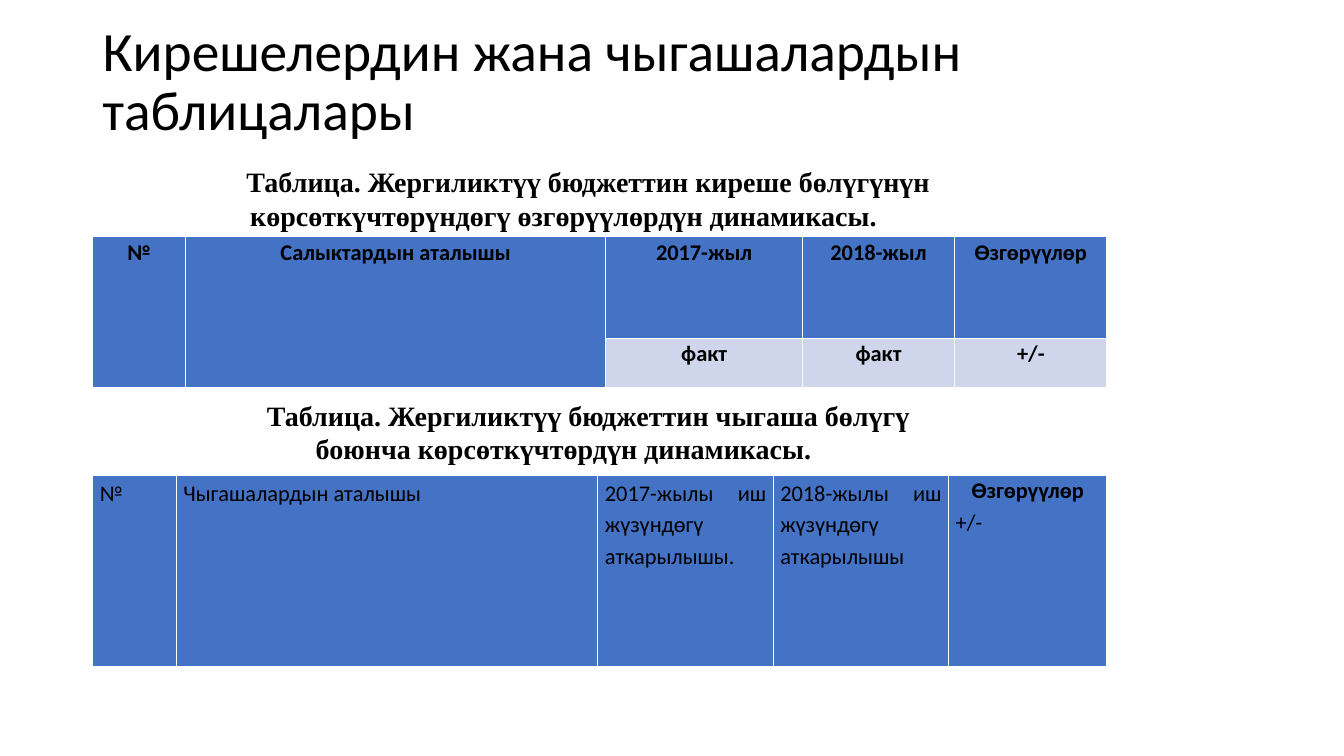
from dataclasses import dataclass

from pptx import Presentation
from pptx.dml.color import RGBColor
from pptx.enum.text import MSO_ANCHOR, PP_ALIGN
from pptx.slide import Slide
from pptx.text.text import TextFrame
from pptx.util import Emu, Inches, Pt

MIDDLE = MSO_ANCHOR.MIDDLE
LEFT, CENTER, JUSTIFY = PP_ALIGN.LEFT, PP_ALIGN.CENTER, PP_ALIGN.JUSTIFY

SLIDE_WIDTH, SLIDE_HEIGHT = Inches(13.33), Inches(7.5)


@dataclass(frozen=True)
class Theme:
    ink: RGBColor = RGBColor(0, 0, 0)
    header_fill: RGBColor = RGBColor(0x44, 0x72, 0xC4)
    body_fill: RGBColor = RGBColor(0xCF, 0xD5, 0xEA)
    sans: str = "Calibri"
    serif: str = "Times New Roman"
    title_size: float = 39.6
    caption_size: float = 20
    cell_size: float = 16


@dataclass(frozen=True)
class Line:
    text: str
    bold: bool = False
    align: PP_ALIGN = JUSTIFY
    spacing: float = 1.15


@dataclass(frozen=True)
class Caption:
    text: str
    top: float
    height: float
    bottom_inset: float = 0.05


@dataclass(frozen=True)
class BudgetTable:
    top: float
    columns: list[float]
    rows: list[float]
    cells: list[list[list[Line]]]
    merged_columns: int = 0


THEME = Theme()
TABLE_LEFT = 6.9
CAPTION_LEFT, CAPTION_WIDTH = 13.13, 57.61


def across(percent: float) -> Emu:
    return Emu(round(SLIDE_WIDTH * percent / 100))


def down(percent: float) -> Emu:
    return Emu(round(SLIDE_HEIGHT * percent / 100))


def heading(text: str) -> list[Line]:
    return [Line(text, bold=True, align=CENTER, spacing=1.07)]


INCOME = BudgetTable(
    top=31.33,
    columns=[6.9, 31.28, 14.63, 11.33, 11.33],
    rows=[13.47, 6.53],
    cells=[
        [heading(name) for name in
         ("№", "Салыктардын аталышы", "2017-жыл", "2018-жыл", "Өзгөрүүлөр")],
        [[], [], heading("факт"), heading("факт"), heading("+/-")],
    ],
    merged_columns=2,
)
EXPENSES = BudgetTable(
    top=62.93,
    columns=[6.23, 31.36, 13.05, 13.05, 11.78],
    rows=[25.2],
    cells=[[
        [Line("№")],
        [Line("Чыгашалардын аталышы")],
        [Line("2017-жылы иш жүзүндөгү аткарылышы.")],
        [Line("2018-жылы иш жүзүндөгү аткарылышы")],
        heading("Өзгөрүүлөр") + [Line("+/-")],
    ]],
)
CAPTIONS = [
    Caption("Таблица. Жергиликтүү бюджеттин чыгаша бөлүгү боюнча "
            "көрсөткүчтөрдүн динамикасы.", 51.87, 13.87, bottom_inset=0.3),
    Caption("Таблица. Жергиликтүү бюджеттин киреше бөлүгүнүн "
            "көрсөткүчтөрүндөгү өзгөрүүлөрдүн динамикасы.", 21.07, 10.27),
]


def write(frame: TextFrame, lines: list[Line], *, font: str, size: float,
          first_indent: float = 0) -> None:
    for index, line in enumerate(lines):
        paragraph = frame.add_paragraph() if index else frame.paragraphs[0]
        paragraph.alignment = line.align
        paragraph.line_spacing = line.spacing
        if first_indent:
            properties = paragraph._p.get_or_add_pPr()
            properties.set("marL", "0")
            properties.set("indent", str(Inches(first_indent)))
        run = paragraph.add_run()
        run.text = line.text
        run.font.name = font
        run.font.size = Pt(size)
        run.font.bold = line.bold
        run.font.color.rgb = THEME.ink


def add_text_frame(slide: Slide, left: float, top: float, width: float,
                   height: float, bottom_inset: float) -> TextFrame:
    """Place a wrapping, middle-anchored text box, in percent of the slide."""
    frame = slide.shapes.add_textbox(
        across(left), down(top), across(width), down(height)).text_frame
    frame.word_wrap = True
    frame.vertical_anchor = MIDDLE
    frame.margin_bottom = Inches(bottom_inset)
    return frame


def add_caption(slide: Slide, caption: Caption) -> None:
    frame = add_text_frame(slide, CAPTION_LEFT, caption.top, CAPTION_WIDTH,
                           caption.height, caption.bottom_inset)
    write(frame, [Line(caption.text, bold=True, align=CENTER, spacing=1.0)],
          font=THEME.serif, size=THEME.caption_size, first_indent=0.49)


def add_budget_table(slide: Slide, budget: BudgetTable) -> None:
    table = slide.shapes.add_table(
        len(budget.rows), len(budget.columns), across(TABLE_LEFT),
        down(budget.top), across(sum(budget.columns)),
        down(sum(budget.rows))).table
    for column, width in zip(table.columns, budget.columns):
        column.width = across(width)
    for row, height in zip(table.rows, budget.rows):
        row.height = down(height)
    for column_index in range(budget.merged_columns):
        table.cell(0, column_index).merge(
            table.cell(len(budget.rows) - 1, column_index))
    for row_index, row_cells in enumerate(budget.cells):
        for column_index, lines in enumerate(row_cells):
            cell = table.cell(row_index, column_index)
            is_header = row_index == 0 or cell.is_spanned
            cell.fill.solid()
            cell.fill.fore_color.rgb = (
                THEME.header_fill if is_header else THEME.body_fill)
            cell.margin_left = cell.margin_right = Inches(0.07)
            cell.margin_top = cell.margin_bottom = 0
            write(cell.text_frame, lines, font=THEME.sans,
                  size=THEME.cell_size)


def main() -> None:
    presentation = Presentation()
    presentation.slide_width = SLIDE_WIDTH
    presentation.slide_height = SLIDE_HEIGHT
    slide = presentation.slides.add_slide(presentation.slide_layouts[6])

    title = add_text_frame(slide, TABLE_LEFT, 5.33, 86.27, 19.33,
                           bottom_inset=0.65)
    write(title, [Line("Кирешелердин жана чыгашалардын таблицалары",
                       align=LEFT, spacing=0.9)],
          font=THEME.sans, size=THEME.title_size)
    for budget in (INCOME, EXPENSES):
        add_budget_table(slide, budget)
    for caption in CAPTIONS:
        add_caption(slide, caption)
    presentation.save("out.pptx")


if __name__ == "__main__":
    main()
